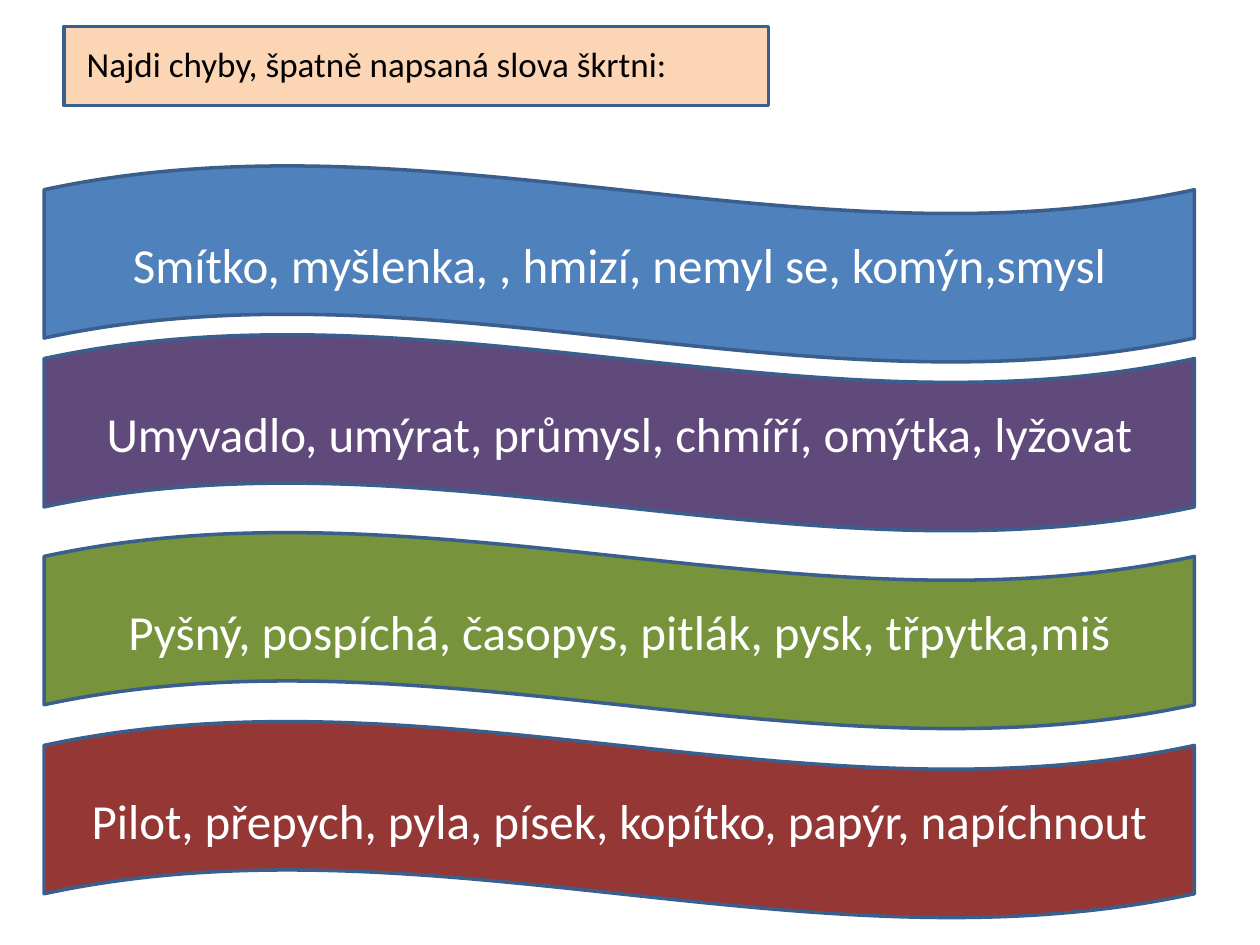
from typing import NamedTuple

from pptx import Presentation
from pptx.dml.color import RGBColor
from pptx.enum.shapes import MSO_SHAPE
from pptx.enum.text import MSO_ANCHOR, MSO_AUTO_SIZE, PP_ALIGN
from pptx.util import Inches, Pt

RECTANGLE, WAVE = MSO_SHAPE.RECTANGLE, MSO_SHAPE.WAVE
MIDDLE = MSO_ANCHOR.MIDDLE
CENTER, LEFT = PP_ALIGN.CENTER, PP_ALIGN.LEFT
FIT_SHAPE = MSO_AUTO_SIZE.SHAPE_TO_FIT_TEXT

WHITE = RGBColor(0xFF, 0xFF, 0xFF)
BLACK = RGBColor(0x00, 0x00, 0x00)
PEACH = RGBColor(0xFC, 0xD5, 0xB5)
BLUE = RGBColor(0x4F, 0x81, 0xBD)
PURPLE = RGBColor(0x60, 0x4A, 0x7B)
GREEN = RGBColor(0x77, 0x93, 0x3C)
RED = RGBColor(0x95, 0x37, 0x35)
OUTLINE = RGBColor(0x3A, 0x5F, 0x8C)


class Box(NamedTuple):
    left: float
    top: float
    width: float
    height: float


class WordWave(NamedTuple):
    top: float
    fill: RGBColor
    words: str


WORD_WAVES = [
    WordWave(1.31, BLUE, "Smítko, myšlenka, , hmizí, nemyl se, komýn,smysl"),
    WordWave(2.65, PURPLE, "Umyvadlo, umýrat, průmysl, chmíří, omýtka, lyžovat"),
    WordWave(4.22, GREEN, "Pyšný, pospíchá, časopys, pitlák, pysk, třpytka,miš"),
    WordWave(5.72, RED, "Pilot, přepych, pyla, písek, kopítko, papýr, napíchnout"),
]


def add_outlined_shape(slide, kind: MSO_SHAPE, box: Box, fill: RGBColor):
    shape = slide.shapes.add_shape(kind, *map(Inches, box))
    shape.shadow.inherit = False
    shape.fill.solid()
    shape.fill.fore_color.rgb = fill
    shape.line.color.rgb = OUTLINE
    shape.line.width = Pt(2)
    return shape


def write_line(frame, text: str, size: int, color: RGBColor, align: PP_ALIGN) -> None:
    paragraph = frame.paragraphs[0]
    paragraph.alignment = align
    run = paragraph.add_run()
    run.text = text
    for attribute, value in {"name": "Calibri", "size": Pt(size)}.items():
        setattr(run.font, attribute, value)
    run.font.color.rgb = color


def add_word_wave(slide, wave: WordWave) -> None:
    banner = add_outlined_shape(slide, WAVE, Box(0.35, wave.top, 9.13, 1.57), wave.fill)
    banner.text_frame.vertical_anchor = MIDDLE
    write_line(banner.text_frame, wave.words, 28, WHITE, CENTER)


def add_instruction(slide, text: str) -> None:
    instruction = slide.shapes.add_textbox(*map(Inches, Box(0.59, 0.29, 6.06, 0.44)))
    for attribute, value in {"word_wrap": True, "auto_size": FIT_SHAPE}.items():
        setattr(instruction.text_frame, attribute, value)
    write_line(instruction.text_frame, text, 20, BLACK, LEFT)


def main() -> None:
    deck = Presentation()
    deck.slide_width, deck.slide_height = Inches(10), Inches(7.5)
    slide = deck.slides.add_slide(deck.slide_layouts[6])
    add_outlined_shape(slide, RECTANGLE, Box(0.51, 0.21, 5.59, 0.63), PEACH)
    for wave in WORD_WAVES:
        add_word_wave(slide, wave)
    add_instruction(slide, "Najdi chyby, špatně napsaná slova škrtni:")
    deck.save("out.pptx")


if __name__ == "__main__":
    main()
